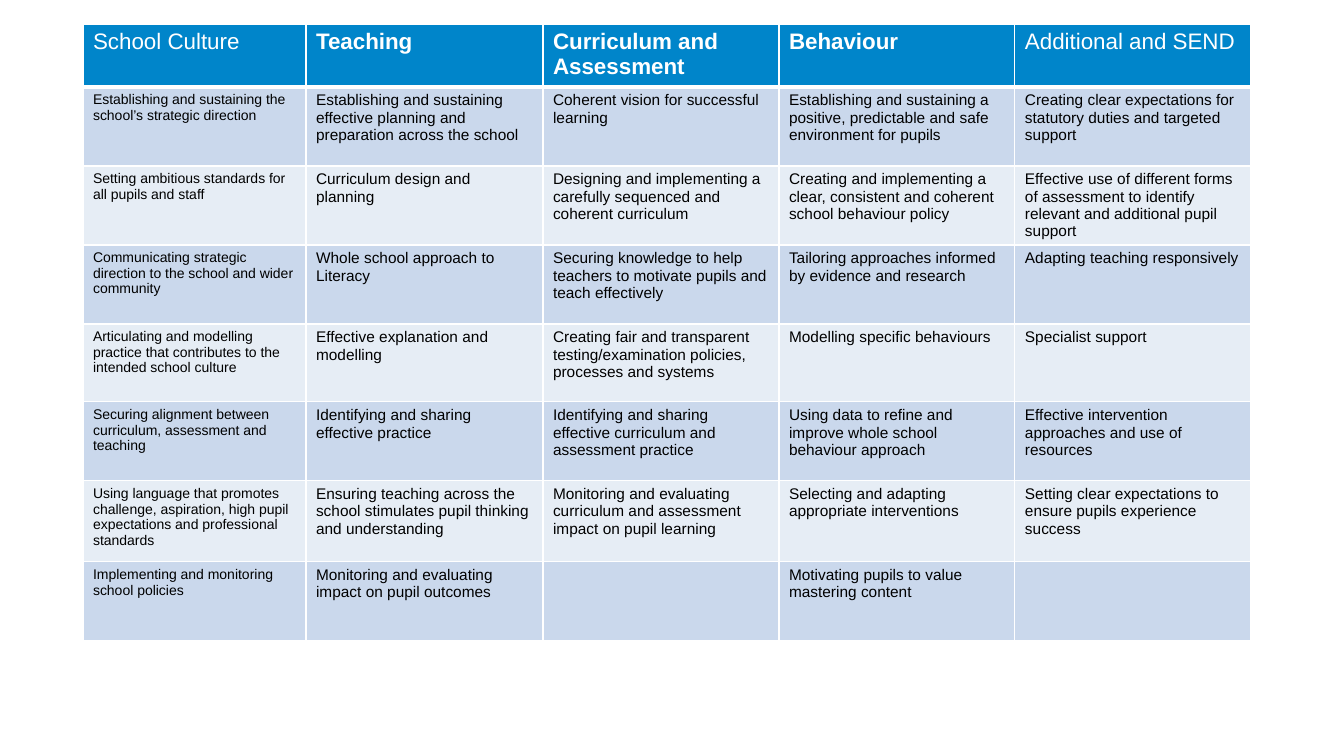
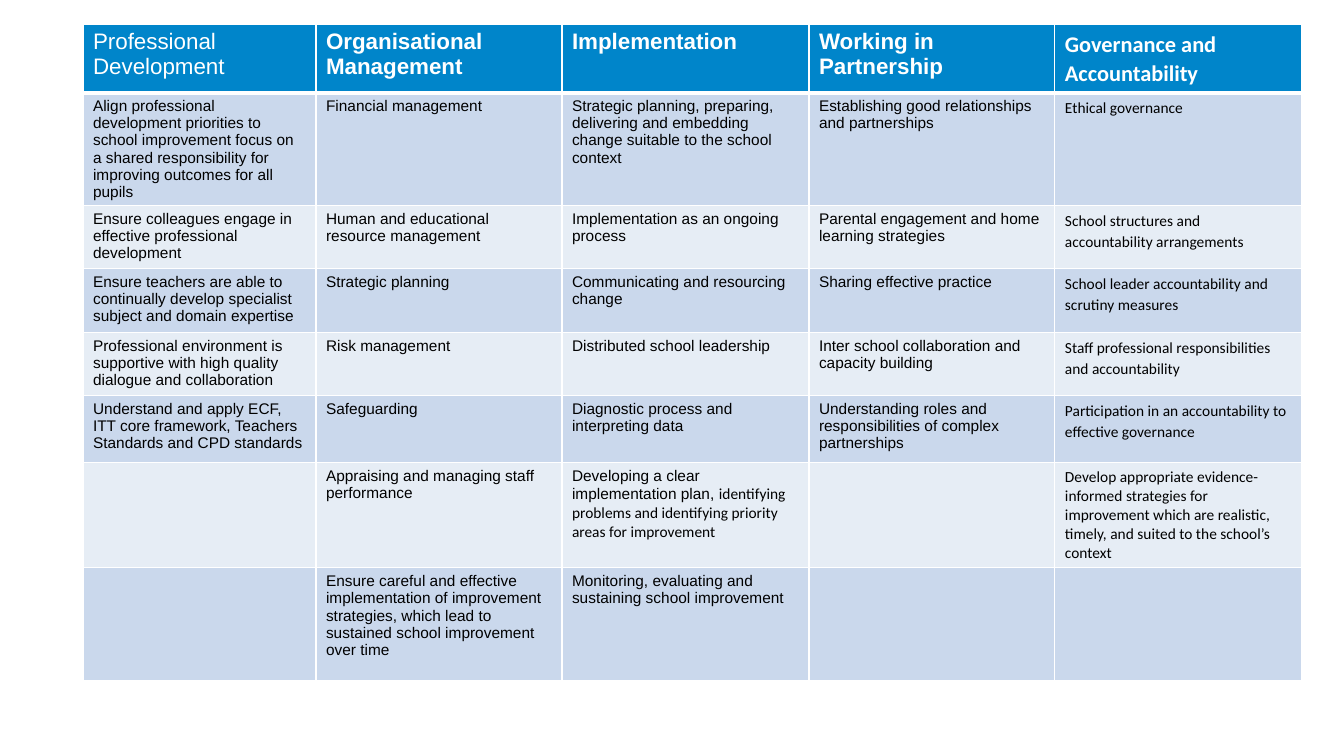
from dataclasses import dataclass

import lxml.etree
import pptx
import pptx.dml.color
import pptx.oxml.ns
import pptx.util

UNIT = 914400 / 100.8  # EMU in one px


# Theme
@dataclass(frozen=True)
class Theme:
    head: str = "0085CA"
    bands: tuple[str, str] = ("CAD8EC", "E6EDF5")
    white: str = "FFFFFF"
    ink: str = "000000"
    sans: str = "Arial"
    alt: str = "Calibri"
    title: int = 16
    body: int = 11
    small: int = 10
    thin: int = 1
    thick: int = 3
    loose: float = 1.07


THEME = Theme()


# Parts of a table
@dataclass(frozen=True)
class Col:
    width: int
    head: str
    size: int = THEME.body
    font: str = THEME.sans
    bold: bool = True
    space: float | None = None


@dataclass(frozen=True)
class Run:
    text: str
    font: str


@dataclass(frozen=True)
class Rich:
    """Runs with their own fonts, at single line spacing."""
    runs: tuple[Run, ...]


@dataclass(frozen=True)
class Grid:
    cols: list[Col]
    highs: list[int]
    body: list[list[str | Rich]]


def px(num: int) -> pptx.util.Emu:
    return pptx.util.Emu(round(num * UNIT))


def rgb(code: str) -> pptx.dml.color.RGBColor:
    return pptx.dml.color.RGBColor.from_string(code)


# Text and cells
def write(para, text: str, *, font: str, size: int, color: str,
          bold: bool = False, space: float | None = None) -> None:
    run = para.add_run()
    run.text = text
    run.font.name = font
    run.font.size = pptx.util.Pt(size)
    run.font.bold = bold
    run.font.color.rgb = rgb(color)
    if space:
        para.line_spacing = space


def edge(cell, top: int, base: int) -> None:
    """Draw white borders; the line elements come before the fill."""
    props = cell._tc.get_or_add_tcPr()
    qn = pptx.oxml.ns.qn
    sides = {"lnL": THEME.thin, "lnR": THEME.thin, "lnT": top, "lnB": base}
    for spot, (tag, width) in enumerate(sides.items()):
        line = lxml.etree.Element(qn(f"a:{tag}"), w=str(pptx.util.Pt(width)))
        fill = lxml.etree.SubElement(line, qn("a:solidFill"))
        lxml.etree.SubElement(fill, qn("a:srgbClr"), val=THEME.white)
        props.insert(spot, line)


def paint(cell, row: int) -> None:
    cell.fill.solid()
    cell.fill.fore_color.rgb = rgb(THEME.bands[(row - 1) % 2] if row else THEME.head)
    edge(cell, THEME.thick if row == 1 else THEME.thin,
         THEME.thin if row else THEME.thick)


def fill(cell, item: str | Rich, col: Col) -> None:
    para = cell.text_frame.paragraphs[0]
    if isinstance(item, Rich):
        for run in item.runs:
            write(para, run.text, font=run.font, size=col.size, color=THEME.ink)
    elif item:
        write(para, item, font=col.font, size=col.size, color=THEME.ink,
              space=col.space)


# Slide
def draw(deck, grid: Grid) -> None:
    slide = deck.slides.add_slide(deck.slide_layouts[6])
    wide = sum(col.width for col in grid.cols)
    frame = slide.shapes.add_table(len(grid.highs), len(grid.cols), px(83), px(24),
                                   px(wide), px(sum(grid.highs)))
    table = frame.table
    for row, high in enumerate(grid.highs):
        table.rows[row].height = px(high)
    for spot, col in enumerate(grid.cols):
        table.columns[spot].width = px(col.width)
        for row in range(len(grid.highs)):
            cell = table.cell(row, spot)
            paint(cell, row)
            if row:
                fill(cell, grid.body[row - 1][spot], col)
            else:
                write(cell.text_frame.paragraphs[0], col.head, font=col.font,
                      size=THEME.title, color=THEME.white, bold=col.bold,
                      space=col.space)


# Content
SCHOOL = Grid(
    cols=[
        Col(223, "School Culture", size=THEME.small, bold=False),
        Col(237, "Teaching"),
        Col(236, "Curriculum and Assessment"),
        Col(236, "Behaviour"),
        Col(236, "Additional and SEND", bold=False),
    ],
    highs=[63, 79, 79, 79, 78, 79, 81, 79],
    body=[
        ["Establishing and sustaining the school’s strategic direction",
         "Establishing and sustaining effective planning and preparation across the school",
         "Coherent vision for successful learning",
         "Establishing and sustaining a positive, predictable and safe environment for pupils",
         "Creating clear expectations for statutory duties and targeted support"],
        ["Setting ambitious standards for all pupils and staff",
         "Curriculum design and planning",
         "Designing and implementing a carefully sequenced and coherent curriculum",
         "Creating and implementing a clear, consistent and coherent school behaviour policy",
         "Effective use of different forms of assessment to identify relevant and "
         "additional pupil support"],
        ["Communicating strategic direction to the school and wider community",
         "Whole school approach to Literacy",
         "Securing knowledge to help teachers to motivate pupils and teach effectively",
         "Tailoring approaches informed by evidence and research",
         "Adapting teaching responsively"],
        ["Articulating and modelling practice that contributes to the intended school culture",
         "Effective explanation and modelling",
         "Creating fair and transparent testing/examination policies, processes and systems",
         "Modelling specific behaviours",
         "Specialist support"],
        ["Securing alignment between curriculum, assessment and teaching",
         "Identifying and sharing effective practice",
         "Identifying and sharing effective curriculum and assessment practice",
         "Using data to refine and improve whole school behaviour approach",
         "Effective intervention approaches and use of resources"],
        ["Using language that promotes challenge, aspiration, high pupil expectations "
         "and professional standards",
         "Ensuring teaching across the school stimulates pupil thinking and understanding",
         "Monitoring and evaluating curriculum and assessment impact on pupil learning",
         "Selecting and adapting appropriate interventions",
         "Setting clear expectations to ensure pupils experience success"],
        ["Implementing and monitoring school policies",
         "Monitoring and evaluating impact on pupil outcomes",
         "",
         "Motivating pupils to value mastering content",
         ""],
    ],
)

STAFF = Grid(
    cols=[
        Col(233, "Professional Development", bold=False),
        Col(246, "Organisational Management"),
        Col(247, "Implementation"),
        Col(246, "Working in Partnership"),
        Col(247, "Governance and Accountability", font=THEME.alt, space=THEME.loose),
    ],
    highs=[68, 113, 63, 64, 63, 67, 105, 113],
    body=[
        ["Align professional development priorities to school improvement focus on "
         "a shared responsibility for improving outcomes for all pupils",
         "Financial management",
         "Strategic planning, preparing, delivering and embedding change suitable "
         "to the school context",
         "Establishing good relationships and partnerships",
         "Ethical governance"],
        ["Ensure colleagues engage in effective professional development",
         "Human and educational resource management",
         "Implementation as an ongoing process",
         "Parental engagement and home learning strategies",
         "School structures and accountability arrangements"],
        ["Ensure teachers are able to continually develop specialist subject and "
         "domain expertise",
         "Strategic planning",
         "Communicating and resourcing change",
         "Sharing effective practice",
         "School leader accountability and scrutiny measures"],
        ["Professional environment is supportive with high quality dialogue and collaboration",
         "Risk management",
         "Distributed school leadership",
         "Inter school collaboration and capacity building",
         "Staff professional responsibilities and accountability"],
        ["Understand and apply ECF, ITT core framework, Teachers Standards and CPD standards",
         "Safeguarding",
         "Diagnostic process and interpreting data",
         "Understanding roles and responsibilities of complex partnerships",
         "Participation in an accountability to effective governance"],
        ["",
         "Appraising and managing staff performance",
         Rich((Run("Developing a clear implementation plan, ", THEME.sans),
               Run("identifying problems and identifying priority areas for improvement",
                   THEME.alt))),
         "",
         Rich((Run("Develop appropriate evidence-informed strategies for improvement "
                   "which are realistic, timely, and suited to the school’s context",
                   THEME.alt),))],
        ["",
         "Ensure careful and effective implementation of improvement strategies, "
         "which lead to sustained school improvement over time",
         "Monitoring, evaluating and sustaining school improvement",
         "",
         ""],
    ],
)


def main() -> None:
    deck = pptx.Presentation()
    deck.slide_width, deck.slide_height = px(1344), px(756)
    for grid in (SCHOOL, STAFF):
        draw(deck, grid)
    deck.save("out.pptx")


if __name__ == "__main__":
    main()
